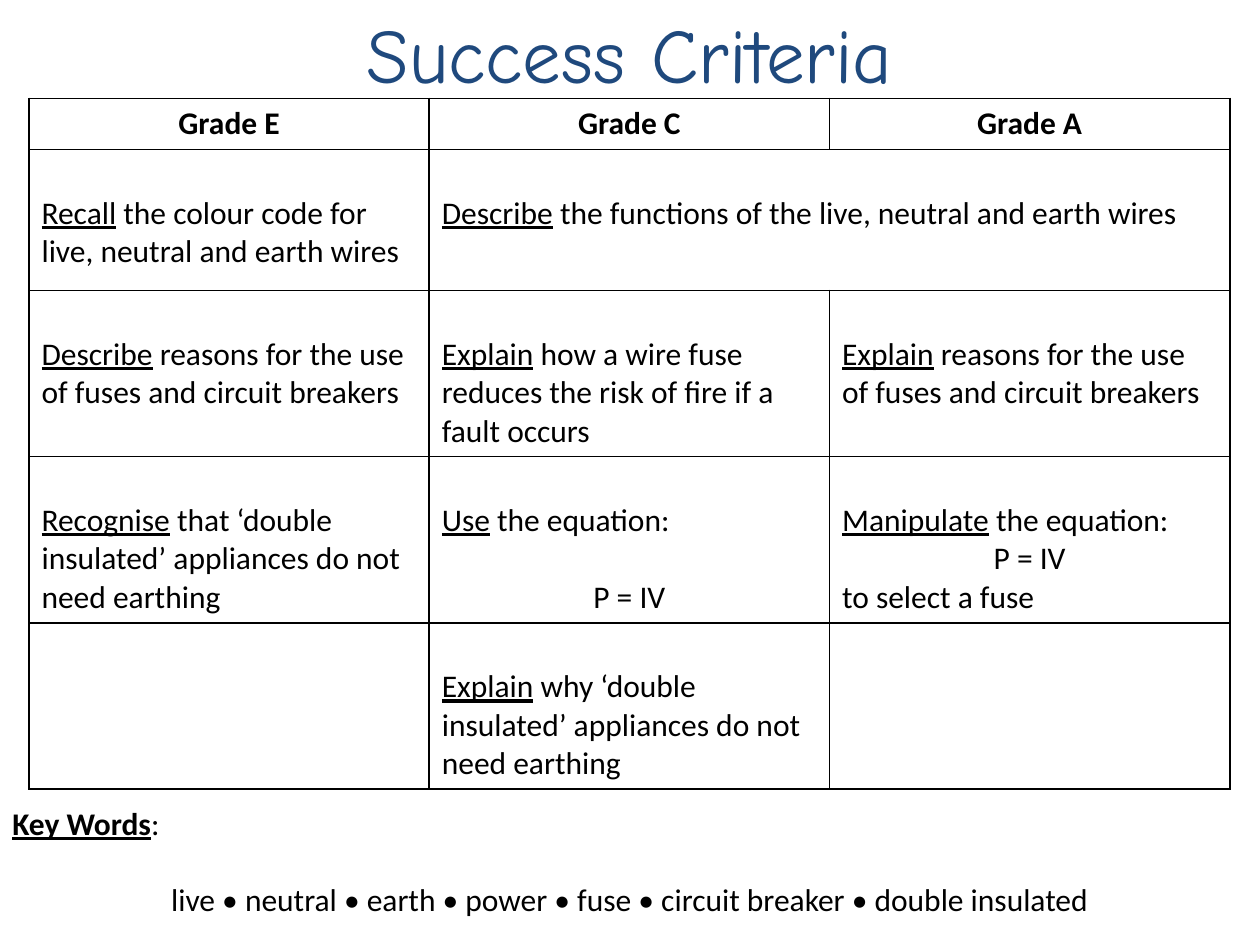
from dataclasses import dataclass

from lxml.etree import SubElement
from pptx import Presentation
from pptx.dml.color import RGBColor
from pptx.enum.text import MSO_ANCHOR as Anchor, PP_ALIGN as Align
from pptx.oxml.ns import qn
from pptx.util import Inches, Pt

BLACK = RGBColor(0x00, 0x00, 0x00)
NAVY = RGBColor(0x1F, 0x49, 0x7D)
WIDTH, HEIGHT = Inches(10), Inches(7.5)
LINE = Pt(22)
BODY = {"name": "Calibri", "size": Pt(18), "bold": False}
HEADING = {**BODY, "bold": True}
TITLE = {"name": "Comic Neue", "size": Pt(44), "bold": False}
LEFT, TOP, COLUMN = 0.023, 0.104, 0.3177
ROWS = (0.405, 1.12, 1.32, 1.32, 1.32)


@dataclass(frozen=True)
class Line:
    """One paragraph, with an optional underlined lead."""
    text: str
    lead: str = ""
    align: Align = Align.LEFT
    gap: int = 0


@dataclass(frozen=True)
class Criterion:
    """The lines of one table cell at a row and column of the grid."""
    row: int
    column: int
    lines: tuple[Line, ...]
    span: int = 1


FORMULA = Line("P = IV", align=Align.CENTER)
FUSES = " reasons for the use of fuses and circuit breakers"
INSULATED = " ‘double insulated’ appliances do not need earthing"
GRADES = ("Grade E", "Grade C", "Grade A")
CRITERIA = (
    Criterion(1, 0, (Line(" the colour code for live, neutral and earth wires", "Recall"),)),
    Criterion(1, 1, (Line(" the functions of the live, neutral and earth wires", "Describe"),), 2),
    Criterion(2, 0, (Line(FUSES, "Describe"),)),
    Criterion(2, 1, (Line(" how a wire fuse reduces the risk of fire if a fault occurs", "Explain"),)),
    Criterion(2, 2, (Line(FUSES, "Explain"),)),
    Criterion(3, 0, (Line(" that" + INSULATED, "Recognise"),)),
    Criterion(3, 1, (Line(" the equation:", "Use"), Line("P = IV", align=Align.CENTER, gap=LINE))),
    Criterion(3, 2, (Line(" the equation:", "Manipulate"), FORMULA, Line("to select a fuse"))),
    Criterion(4, 1, (Line(" why" + INSULATED, "Explain"),)),
)
KEY_WORDS = (
    Line(":", "Key Words"),
    Line("live • neutral • earth • power • fuse • circuit breaker • double insulated",
         align=Align.CENTER, gap=LINE),
)


def add_span(para, text: str, style: dict, colour: RGBColor) -> None:
    """Add formatted text to a paragraph."""
    span = para.add_run()
    span.text = text
    for name, value in style.items():
        setattr(span.font, name, value)
    span.font.color.rgb = colour


def write(frame, lines: tuple[Line, ...], style: dict = BODY,
          colour: RGBColor = BLACK, lead_bold: bool = False) -> None:
    """Fill a text frame with lines."""
    for index, line in enumerate(lines):
        para = frame.add_paragraph() if index else frame.paragraphs[0]
        para.alignment = line.align
        if line.gap:
            para.space_before = line.gap
        if line.lead:
            add_span(para, line.lead, {**style, "underline": True, "bold": lead_bold}, colour)
        add_span(para, line.text, style, colour)


def add_box(page, left: float, top: float, width: float, height: float):
    """Add a wrapped text box placed by shares of the slide."""
    box = page.shapes.add_textbox(int(left * WIDTH), int(top * HEIGHT),
                                  int(width * WIDTH), int(height * HEIGHT))
    box.text_frame.word_wrap = True
    box.text_frame.vertical_anchor = Anchor.TOP
    return box.text_frame


def outline(cell) -> None:
    """Give a cell black borders and no fill."""
    properties = cell._tc.get_or_add_tcPr()
    for side in ("a:lnL", "a:lnR", "a:lnT", "a:lnB"):
        border = SubElement(properties, qn(side), w=str(Pt(1)))
        SubElement(SubElement(border, qn("a:solidFill")), qn("a:srgbClr"), val=str(BLACK))
    cell.fill.background()


def add_criteria(page) -> None:
    """Draw the table of grades and criteria."""
    table = page.shapes.add_table(
        len(ROWS), len(GRADES), int(LEFT * WIDTH), int(TOP * HEIGHT),
        int(len(GRADES) * COLUMN * WIDTH), Inches(sum(ROWS))).table
    table.first_row = table.horz_banding = False
    for column in table.columns:
        column.width = int(COLUMN * WIDTH)
    for row, height in zip(table.rows, ROWS):
        row.height = Inches(height)
    for cell in table.iter_cells():
        outline(cell)
    for column, grade in enumerate(GRADES):
        write(table.cell(0, column).text_frame, (Line(grade, align=Align.CENTER),), HEADING)
    for item in CRITERIA:
        cell = table.cell(item.row, item.column)
        if item.span > 1:
            cell.merge(table.cell(item.row, item.column + item.span - 1))
        cell.margin_top = Inches(0.05) + LINE
        write(cell.text_frame, item.lines)


def main() -> None:
    """Build and save the deck."""
    deck = Presentation()
    deck.slide_width, deck.slide_height = WIDTH, HEIGHT
    page = deck.slides.add_slide(deck.slide_layouts[6])
    write(add_box(page, 0.05, 0, 0.9, 0.167),
          (Line("Success Criteria", align=Align.CENTER),), TITLE, NAVY)
    add_criteria(page)
    write(add_box(page, 0, 0.844, 1, 0.135), KEY_WORDS, lead_bold=True)
    deck.save("out.pptx")


if __name__ == "__main__":
    main()
